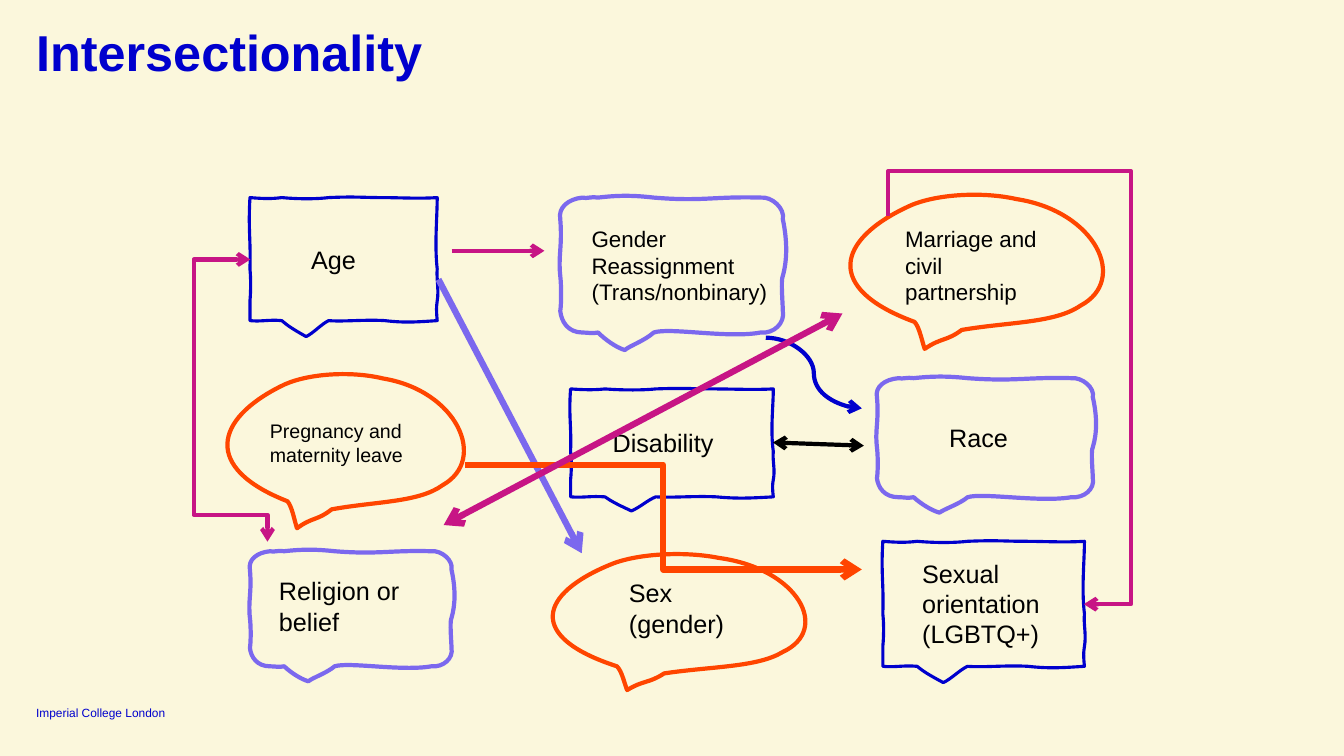
from lxml import etree
from pptx import Presentation
from pptx import util as u
from pptx.dml.color import RGBColor
from pptx.enum import shapes, text
from pptx.oxml import ns

COLOURS = {"cream": "FBF7DC", "blue": "0000CD", "violet": "7B68EE",
           "orange": "FF4500", "pink": "C71585", "black": "000000"}
FONT = "Arial"

# Speech bubble outlines in percent of the bubble's body: a start point, then
# one row per Bezier curve with two control points and an end point.
BOX = [
    (0, 0),
    (7.5, 1), (12, 1), (17, 0),
    (24, 1), (34, 1.5), (42, 0),
    (56, -1), (61, 0), (70, 0),
    (80, 0), (90, 1), (100, 0),
    (100, 16), (98.5, 38), (100, 58),
    (99.5, 66), (101, 75), (100, 84),
    (99.5, 89), (99.5, 92), (100, 100),
    (90, 101), (83, 102), (72, 100),
    (61, 99), (50, 101), (42, 100),
    (38, 103), (34, 110), (30, 113),
    (23, 107), (20, 104), (17, 100),
    (10, 99), (6, 101), (0, 100),
    (0, 97), (0, 88), (0, 84),
    (0.5, 76), (0.5, 65), (0, 58),
    (0.5, 34), (-1, 26), (0, 0),
]
ROUNDED = [
    (0, 16),
    (-1, 7.5), (3.5, 1), (10, 0),
    (12, 1), (14, -1), (17, 0),
    (27, -2), (34, -1.5), (42, 0),
    (64, 3), (69, -1), (90, 0),
    (95, -1), (101, 8), (100, 16),
    (102, 32), (102, 46), (100, 58),
    (99, 61), (100, 79), (100, 84),
    (101, 93), (96, 101), (90, 100),
    (75.5, 104.5), (49, 96), (42, 100),
    (38, 106), (31, 110), (29, 113),
    (25, 111), (20, 105), (17, 100),
    (14, 101), (13, 100), (10, 100),
    (3.5, 100), (0.5, 92), (0, 84),
    (0.5, 79), (0.5, 65), (0, 58),
    (-1, 43), (1, 36), (0, 16),
]
OVAL = [
    (29, 113),
    (28, 108), (27, 97), (25, 93),
    (-11, 68), (-5, 32), (22, 8),
    (32, -1.5), (51, -4), (65, 2),
    (96, 11), (109, 62), (90, 81),
    (80, 94), (62, 93), (43.5, 99),
    (37.5, 107.5), (35.5, 104.5), (29, 113),
]
STYLES = {"box": (BOX, "blue", 2.25), "rounded": (ROUNDED, "violet", 3),
          "oval": (OVAL, "orange", 3)}

# style, bubble body, label, label box, text size
BUBBLES = [
    ("oval", (21.44, 4.95, 6.43, 3.4), "Marriage and civil partnership", (22.56, 5.54, 4.29, 2.31), 16),
    ("box", (6.3, 4.98, 4.72, 3.1), "Age", (7.59, 6.02, 3, 1.02), 18),
    ("rounded", (14.12, 4.98, 5.61, 3.4), "Gender Reassignment (Trans/nonbinary)",
     (14.66, 5.54, 5.11, 2.31), 16),
    ("box", (14.38, 9.8, 5.11, 2.72), "Disability", (15.19, 10.64, 3.99, 1.02), 18),
    ("oval", (5.74, 9.47, 6.02, 3.4), "Pregnancy and maternity leave", (6.55, 10.44, 4.29, 1.45), 14),
    ("rounded", (22.1, 9.53, 5.44, 3), "Race", (23.67, 10.52, 3.84, 1.02), 18),
    ("box", (22.25, 13.64, 5.08, 3.15), "Sexual orientation (LGBTQ+)", (22.99, 13.94, 3.86, 2.57), 18),
    ("rounded", (6.3, 13.89, 5.08, 2.9), "Religion or belief", (6.78, 14.38, 3.78, 1.8), 18),
    ("oval", (13.94, 14, 6.43, 3), "Sex (gender)", (15.6, 14.43, 3.4, 1.8), 18),
]

STRAIGHT, ELBOW, CURVE = (shapes.MSO_CONNECTOR.STRAIGHT, shapes.MSO_CONNECTOR.ELBOW,
                          shapes.MSO_CONNECTOR.CURVE)
# kind, ends, colour, width, arrowheads, then flip and bends of a turned elbow
ARROWS = [
    (STRAIGHT, (11.05, 7.04, 14.66, 13.94), "violet", 4.5, ["tailEnd"], None, ()),
    (ELBOW, (11.71, 11.71, 21.72, 14.35), "orange", 4.5, ["tailEnd"], None, ()),
    (CURVE, (19.3, 8.51, 21.72, 10.29), "blue", 3, ["tailEnd"], None, ()),
    (STRAIGHT, (11.18, 13.23, 21.23, 7.9), "pink", 4.5, ["headEnd", "tailEnd"], None, ()),
    (STRAIGHT, (19.48, 11.15, 21.77, 11.23), "black", 3, ["headEnd", "tailEnd"], None, ()),
    (STRAIGHT, (11.38, 6.32, 13.72, 6.32), "pink", 3, ["tailEnd"], None, ()),
    (ELBOW, (19.96, 7.87, 29.74, 12.8), "pink", 3, ["tailEnd"], "flipH", (-11600, 124100)),
    (ELBOW, (2.97, 9.88, 10.08, 10.31), "pink", 3, ["headEnd", "tailEnd"], "flipV", (9500, 433000)),
]


def rgb(name):
    return RGBColor.from_string(COLOURS[name])


def write(sp, words, size, colour, bold=False):
    """Put one wrapped paragraph of formatted text in a shape."""
    tf = sp.text_frame
    tf.text = words
    tf.word_wrap = True
    font = tf.paragraphs[0].runs[0].font
    font.name, font.size, font.bold = FONT, u.Pt(size), bold
    font.color.rgb = rgb(colour)
    return tf


prs = Presentation()
prs.slide_width, prs.slide_height = u.Cm(33.87), u.Cm(19.05)
s = prs.slides.add_slide(prs.slide_layouts[5])
s.background.fill.solid()
s.background.fill.fore_color.rgb = rgb("cream")

# Title and footer
title = s.shapes.title
title.left, title.top, title.width, title.height = map(u.Cm, (0.91, 0.71, 32.06, 1.04))
footer = s.shapes.add_textbox(*map(u.Cm, (0.91, 17.75, 3.94, 0.38)))
for sp, words, size, bold, anchor in [
        (title, "Intersectionality", 36, True, text.MSO_ANCHOR.TOP),
        (footer, "Imperial College London", 8.5, False, text.MSO_ANCHOR.BOTTOM)]:
    tf = write(sp, words, size, "blue", bold)
    tf.auto_size = text.MSO_AUTO_SIZE.NONE
    tf.vertical_anchor = anchor
    tf.margin_left = tf.margin_top = tf.margin_right = tf.margin_bottom = 0
    tf.paragraphs[0].alignment = text.PP_ALIGN.LEFT
title.text_frame.paragraphs[0].line_spacing = 0.9

# Bubbles
for style, (x, y, w, h), *_ in BUBBLES:
    outline, colour, width = STYLES[style]
    points = [(u.Cm(x + w * px / 100), u.Cm(y + h * py / 100)) for px, py in outline]
    builder = s.shapes.build_freeform(*points[0])
    builder.add_line_segments(points[1:], close=True)
    sp = builder.convert_to_shape()
    sp.shadow.inherit = False
    sp.fill.background()
    sp.line.color.rgb = rgb(colour)
    sp.line.width = u.Pt(width)
    # Every three line segments become one Bezier curve
    segments = list(sp._element.iter(ns.qn("a:lnTo")))[:len(points) - 1]
    for i in range(0, len(segments), 3):
        curve = etree.Element(ns.qn("a:cubicBezTo"))
        segments[i].addprevious(curve)
        for segment in segments[i:i + 3]:
            curve.append(segment[0])
            segment.getparent().remove(segment)

# Labels
for _, _, words, place, size in BUBBLES:
    label = s.shapes.add_textbox(*map(u.Cm, place))
    write(label, words, size, "black").auto_size = text.MSO_AUTO_SIZE.SHAPE_TO_FIT_TEXT

# Arrows
for kind, ends, colour, width, heads, flip, bends in ARROWS:
    cxn = s.shapes.add_connector(kind, *map(u.Cm, ends))
    cxn.line.color.rgb = rgb(colour)
    cxn.line.width = u.Pt(width)
    spPr = cxn._element.spPr
    for head in heads:
        etree.SubElement(spPr.find(ns.qn("a:ln")), ns.qn("a:" + head), type="arrow")
    etree.SubElement(spPr, ns.qn("a:effectLst"))
    if flip:
        xfrm = spPr.find(ns.qn("a:xfrm"))
        xfrm.set("rot", str(270 * 60000))
        xfrm.set(flip, "1")
        geom = spPr.find(ns.qn("a:prstGeom"))
        geom.set("prst", "bentConnector4")
        guides = geom.find(ns.qn("a:avLst"))
        for n, bend in enumerate(bends, 1):
            etree.SubElement(guides, ns.qn("a:gd"), name=f"adj{n}", fmla=f"val {bend}")

prs.save("out.pptx")
